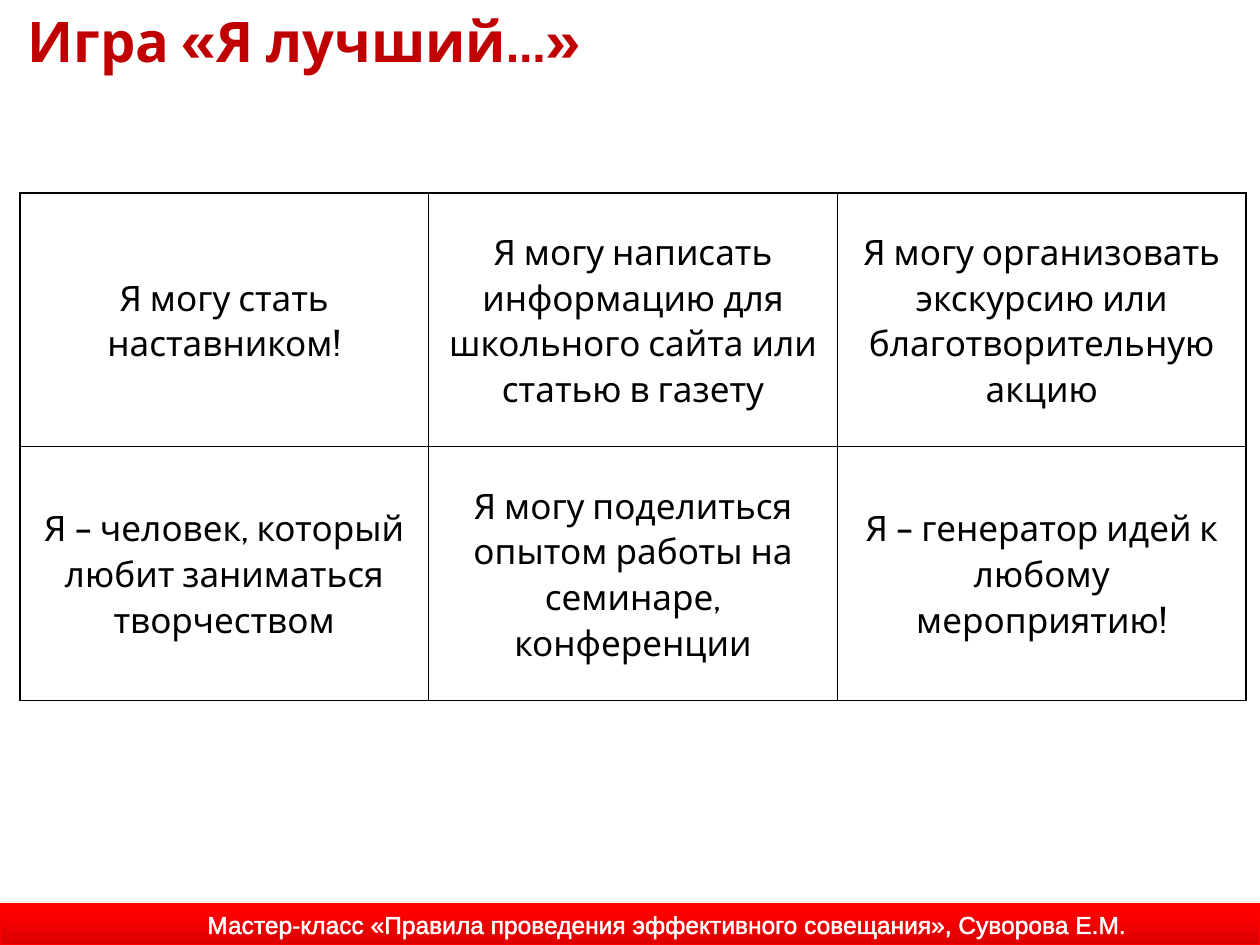
import pptx
import pptx.util
import pptx.oxml
from pptx.dml.color import RGBColor
from pptx.enum.shapes import MSO_SHAPE
from pptx.enum.text import MSO_ANCHOR, MSO_AUTO_SIZE, PP_ALIGN
from pptx.oxml.ns import nsdecls

Cm, Pt = pptx.util.Cm, pptx.util.Pt
COLORS = {"title": "C00000", "text": "000000", "white": "FFFFFF",
          "red": "FF0000", "dark_red": "DA0000"}
CELLS = [
    ["Я могу стать наставником!",
     "Я могу написать информацию для школьного сайта или статью в газету",
     "Я могу организовать экскурсию или благотворительную акцию"],
    ["Я – человек, который любит заниматься творчеством",
     "Я могу поделиться опытом работы на семинаре, конференции",
     "Я – генератор идей к любому мероприятию!"],
]


def add_run(p, text, size, font, color, bold=False):
    r = p.add_run()
    r.text = text
    r.font.size = Pt(size)
    r.font.name = font
    r.font.bold = bold
    r.font.color.rgb = RGBColor.from_string(COLORS[color])
    return r


def line_xml(tag, color, width):
    return pptx.oxml.parse_xml(
        f'<a:{tag} {nsdecls("a")} w="{Pt(width)}"><a:solidFill>'
        f'<a:srgbClr val="{COLORS[color]}"/></a:solidFill></a:{tag}>')


prs = pptx.Presentation()
prs.slide_width, prs.slide_height = Cm(25.4), Cm(19.05)
s = prs.slides.add_slide(prs.slide_layouts[5])

# Footer bar
bar = s.shapes.add_shape(MSO_SHAPE.RECTANGLE, Cm(0), Cm(18.21), Cm(25.4), Cm(0.84))
bar.fill.gradient()
bar.fill.gradient_angle = 90
for stop, color, position in zip(bar.fill.gradient_stops, ("dark_red", "red"), (0, 0.8)):
    stop.color.rgb = RGBColor.from_string(COLORS[color])
    stop.position = position
bar.line.color.rgb = RGBColor.from_string(COLORS["red"])
bar.line.width = Pt(0.75)
bar.shadow.inherit = False
bar.element.spPr.find(pptx.oxml.ns.qn("a:effectLst")).append(pptx.oxml.parse_xml(
    f'<a:outerShdw {nsdecls("a")} blurRad="{Pt(5)}" dist="{Pt(1.8)}" dir="5400000" '
    'rotWithShape="0"><a:srgbClr val="000000"><a:alpha val="35000"/></a:srgbClr>'
    '</a:outerShdw>'))

footer = s.shapes.add_textbox(Cm(3.86), Cm(18.21), Cm(19.18), Cm(0.86))
tf = footer.text_frame
tf.word_wrap = False
tf.auto_size = MSO_AUTO_SIZE.SHAPE_TO_FIT_TEXT
p = tf.paragraphs[0]
p.alignment = PP_ALIGN.CENTER
r = add_run(p, "Мастер-класс «Правила проведения эффективного совещания», Суворова Е.М.",
            14, "Arial", "white")
r.font._element.insert(0, line_xml("ln", "white", 0.8))

# Title
title = s.shapes.title
title.left, title.top, title.width, title.height = Cm(0.3), Cm(0), Cm(22), Cm(1.63)
tf = title.text_frame
tf.word_wrap = True
tf.auto_size = MSO_AUTO_SIZE.SHAPE_TO_FIT_TEXT
tf.vertical_anchor = MSO_ANCHOR.TOP
p = tf.paragraphs[0]
p.alignment = PP_ALIGN.LEFT
add_run(p, "Игра «Я лучший…»", 32, "Cabin", "title", bold=True)

# Table of statements
rows, cols = len(CELLS), len(CELLS[0])
frame = s.shapes.add_table(rows, cols, Cm(0.4), Cm(3.89), Cm(24.72), Cm(10.23))
table = frame.table
table.first_row = table.horz_banding = False
for i, row in enumerate(CELLS):
    for j, text in enumerate(row):
        cell = table.cell(i, j)
        cell.vertical_anchor = MSO_ANCHOR.MIDDLE
        cell.fill.solid()
        cell.fill.fore_color.rgb = RGBColor.from_string(COLORS["white"])
        tcPr = cell._tc.get_or_add_tcPr()
        for k, tag in enumerate(("lnL", "lnR", "lnT", "lnB")):
            tcPr.insert(k, line_xml(tag, "text", 1))
        p = cell.text_frame.paragraphs[0]
        p.alignment = PP_ALIGN.CENTER
        p.line_spacing = 1.07
        p.space_after = Pt(8)
        add_run(p, text, 20, "Cabin", "text")

prs.save("out.pptx")
